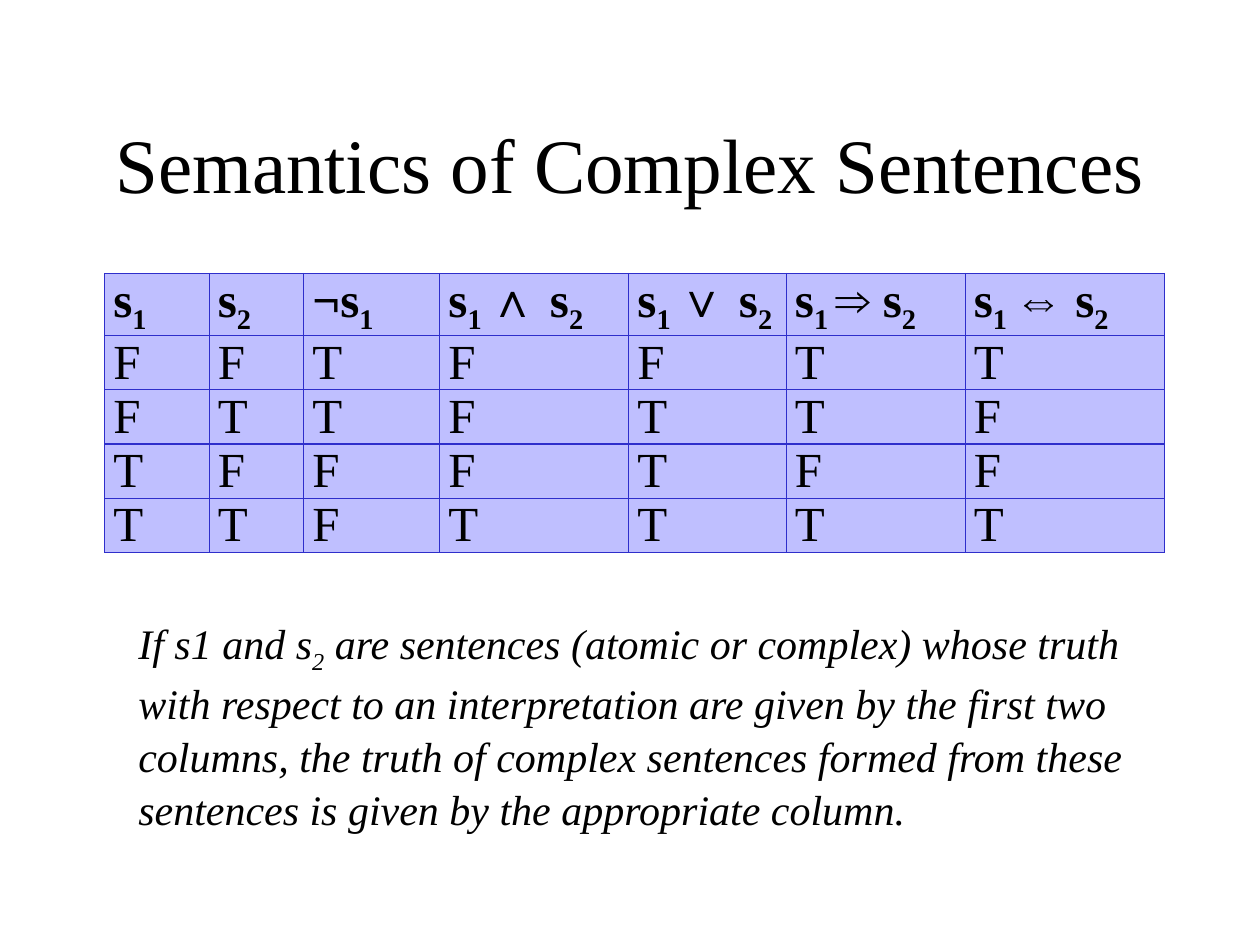
from lxml.etree import SubElement
from pptx import Presentation
from pptx.dml.color import RGBColor
from pptx.enum.text import MSO_ANCHOR as Anchor, MSO_AUTO_SIZE as AutoSize, PP_ALIGN as Align
from pptx.oxml.ns import qn
from pptx.util import Inches, Pt

HEADINGS = [
    ["s", "1"],
    ["s", "2"],
    ["¬s", "1"],
    ["s", "1 ", "∧ s", "2"],
    ["s", "1 ", "∨ s", "2"],
    ["s", "1 ", "⇒ s", "2"],
    ["s", "1 ", "⇔ s", "2"],
]
TRUTH_ROWS = ["FFTFFTT", "FTTFTTF", "TFFFTFF", "TTFTTTT"]
COLUMN_WIDTHS = [0.83, 0.75, 1.08, 1.5, 1.25, 1.42, 1.58]
ROW_HEIGHTS = [0.49] + [0.43] * len(TRUTH_ROWS)
EXPLANATION = [
    "If s1 and s",
    "2",
    " are sentences (atomic or complex) whose truth with respect to an "
    "interpretation are given by the first two columns, the truth of complex "
    "sentences formed from these sentences is given by the appropriate column.",
]


def color(value):
    return RGBColor.from_string(value)


class SlideBuilder:
    font = "Times New Roman"
    ink = "000000"
    cell_fill = "BFBFFF"
    border = "2E2ECB"

    def __init__(self, slide):
        self.slide = slide

    def add_spans(self, para, parts, size, bold=False, italic=False):
        for index, text in enumerate(parts):
            span = para.add_run()
            span.text = text
            span.font.name = self.font
            span.font.size = Pt(size)
            span.font.bold = bold
            span.font.italic = italic
            span.font.color.rgb = color(self.ink)
            if index % 2:
                span.font._element.set("baseline", "-25000")

    def title(self, text, left, top, width, height):
        box = self.slide.shapes.title
        box.left, box.top = Inches(left), Inches(top)
        box.width, box.height = Inches(width), Inches(height)
        box.text_frame.vertical_anchor = Anchor.MIDDLE
        para = box.text_frame.paragraphs[0]
        para.alignment = Align.CENTER
        self.add_spans(para, [text], 44)

    def text(self, parts, left, top, width, height):
        box = self.slide.shapes.add_textbox(
            Inches(left), Inches(top), Inches(width), Inches(height))
        frame = box.text_frame
        frame.word_wrap = True
        frame.auto_size = AutoSize.SHAPE_TO_FIT_TEXT
        para = frame.paragraphs[0]
        para.line_spacing = 1.05
        self.add_spans(para, parts, 24, italic=True)

    def cell(self, cell, parts, bold):
        cell.margin_left = cell.margin_right = Inches(0.07)
        cell.margin_top = cell.margin_bottom = 0
        properties = cell._tc.get_or_add_tcPr()
        for side in ("a:lnL", "a:lnR", "a:lnT", "a:lnB"):
            line = SubElement(properties, qn(side), w=str(Pt(0.75)))
            paint = SubElement(line, qn("a:solidFill"))
            SubElement(paint, qn("a:srgbClr"), val=self.border)
        cell.fill.solid()
        cell.fill.fore_color.rgb = color(self.cell_fill)
        self.add_spans(cell.text_frame.paragraphs[0], parts, 28, bold=bold)

    def table(self, rows, widths, heights, left, top):
        table = self.slide.shapes.add_table(
            len(rows), len(widths), Inches(left), Inches(top),
            Inches(sum(widths)), Inches(sum(heights))).table
        for column, width in zip(table.columns, widths):
            column.width = Inches(width)
        for row, height in zip(table.rows, heights):
            row.height = Inches(height)
        for row_index, row in enumerate(rows):
            for column_index, parts in enumerate(row):
                self.cell(table.cell(row_index, column_index), parts, row_index == 0)


def main():
    deck = Presentation()
    deck.slide_width, deck.slide_height = Inches(10), Inches(7.5)
    page = SlideBuilder(deck.slides.add_slide(deck.slide_layouts[5]))
    page.title("Semantics of Complex Sentences", 0.75, 0.67, 8.5, 1.25)
    page.table([HEADINGS, *TRUTH_ROWS], COLUMN_WIDTHS, ROW_HEIGHTS, 0.83, 2.17)
    page.text(EXPLANATION, 1, 4.83, 8.17, 1.72)
    deck.save("out.pptx")


if __name__ == "__main__":
    main()
